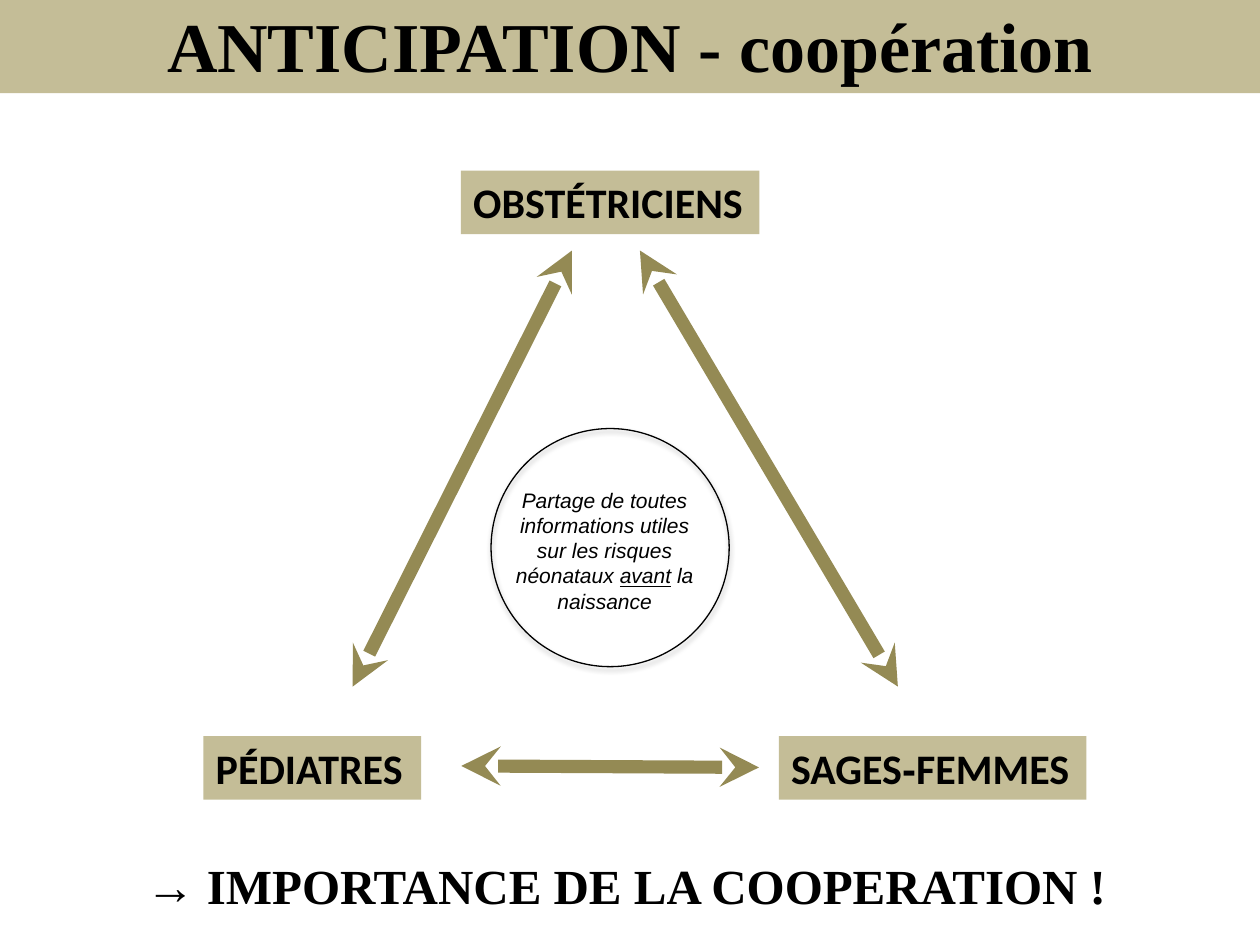
from lxml import etree
from pptx import Presentation
from pptx.dml.color import RGBColor
from pptx.enum.shapes import MSO_CONNECTOR, MSO_SHAPE
from pptx.enum.text import MSO_ANCHOR, MSO_AUTO_SIZE, PP_ALIGN
from pptx.oxml import parse_xml
from pptx.oxml.ns import nsdecls, qn
from pptx.util import Cm, Pt

LEFT, CENTER = PP_ALIGN.LEFT, PP_ALIGN.CENTER
TOP = MSO_ANCHOR.TOP
FIT_SHAPE = MSO_AUTO_SIZE.SHAPE_TO_FIT_TEXT
RECTANGLE, OVAL = MSO_SHAPE.RECTANGLE, MSO_SHAPE.OVAL
STRAIGHT = MSO_CONNECTOR.STRAIGHT

COLORS = {"band": "C4BD97", "arrow": "948A54", "text": "000000"}
TITLE = {"name": "Times New Roman", "size": Pt(40), "bold": True}
ROLE = {"name": "Calibri", "size": Pt(24), "bold": True}
ROLE_HYPHEN = {**ROLE, "name": "Arial"}
SHARING = {"name": "Arial", "size": Pt(12), "italic": True}
CONCLUSION = {**TITLE, "size": Pt(28)}


def color(name):
    return RGBColor.from_string(COLORS[name])


def write(shape, runs, alignment=LEFT, wrap=True):
    """Fill the shape with one paragraph of (text, font format) runs."""
    frame = shape.text_frame
    frame.word_wrap = wrap
    frame.auto_size = FIT_SHAPE
    frame.vertical_anchor = TOP
    paragraph = frame.paragraphs[0]
    paragraph.alignment = alignment
    for text, font_format in runs:
        run = paragraph.add_run()
        run.text = text
        run.font.color.rgb = color("text")
        for attribute, value in font_format.items():
            setattr(run.font, attribute, value)


presentation = Presentation()
presentation.slide_width, presentation.slide_height = Cm(25.4), Cm(19.05)
slide = presentation.slides.add_slide(presentation.slide_layouts[6])
shapes = slide.shapes

# Title band and the three professions
ROLE_HEIGHT = 1.28
BOTTOM_ROW = 14.84
boxes = [
    ((0, -0.08, 25.4, 1.96), [("ANTICIPATION - coopération", TITLE)], CENTER, True),
    ((15.7, BOTTOM_ROW, 6.2, ROLE_HEIGHT),
     [("SAGES", ROLE), ("-", ROLE_HYPHEN), ("FEMMES", ROLE)], LEFT, True),
    ((9.29, 3.44, 6.02, ROLE_HEIGHT), [("OBSTÉTRICIENS", ROLE)], LEFT, False),
    ((4.1, BOTTOM_ROW, 4.39, ROLE_HEIGHT), [("PÉDIATRES", ROLE)], LEFT, False),
]
for position, runs, alignment, wrap in boxes:
    box = shapes.add_shape(RECTANGLE, *map(Cm, position))
    box.shadow.inherit = False
    box.fill.solid()
    box.fill.fore_color.rgb = color("band")
    box.line.fill.background()
    write(box, runs, alignment, wrap)

# Two-way arrows between the professions
arrows = [
    (11.53, 5.05, 7.11, 13.84),
    (15.3, 15.47, 9.3, 15.44),
    (12.9, 5.05, 18.1, 13.84),
]
for ends in arrows:
    arrow = shapes.add_connector(STRAIGHT, *map(Cm, ends))
    arrow.line.color.rgb = color("arrow")
    arrow.line.width = Pt(7.5)
    line_xml = arrow.line._get_or_add_ln()
    for end in ("a:headEnd", "a:tailEnd"):
        etree.SubElement(line_xml, qn(end), type="stealth")
    etree.SubElement(arrow._element.spPr, qn("a:effectLst"))

# Shared information in the middle of the triangle
center = shapes.add_group_shape()
sharing = center.shapes.add_textbox(*map(Cm, (10.08, 9.7, 4.22, 2.82)))
write(sharing, [
    ("Partage de toutes informations utiles sur les risques néonataux ", SHARING),
    ("avant", {**SHARING, "underline": True}),
    (" la naissance", SHARING),
], CENTER)

circle = center.shapes.add_shape(OVAL, *map(Cm, (9.9, 8.64, 4.8, 4.8)))
circle.fill.background()
circle.line.color.rgb = color("text")
circle.line.width = Pt(0.75)
circle._element.spPr.append(parse_xml(
    f'<a:effectLst {nsdecls("a")}>'
    f'<a:outerShdw blurRad="{Pt(3.1)}" dist="{Pt(1.8)}" dir="5400000" rotWithShape="0">'
    f'<a:srgbClr val="{COLORS["text"]}"><a:alpha val="35000"/></a:srgbClr>'
    '</a:outerShdw></a:effectLst>'
))

conclusion = shapes.add_textbox(*map(Cm, (2.69, 17.12, 20.07, 1.45)))
write(conclusion, [("→ IMPORTANCE DE LA COOPERATION !", CONCLUSION)], wrap=False)

presentation.save("out.pptx")
